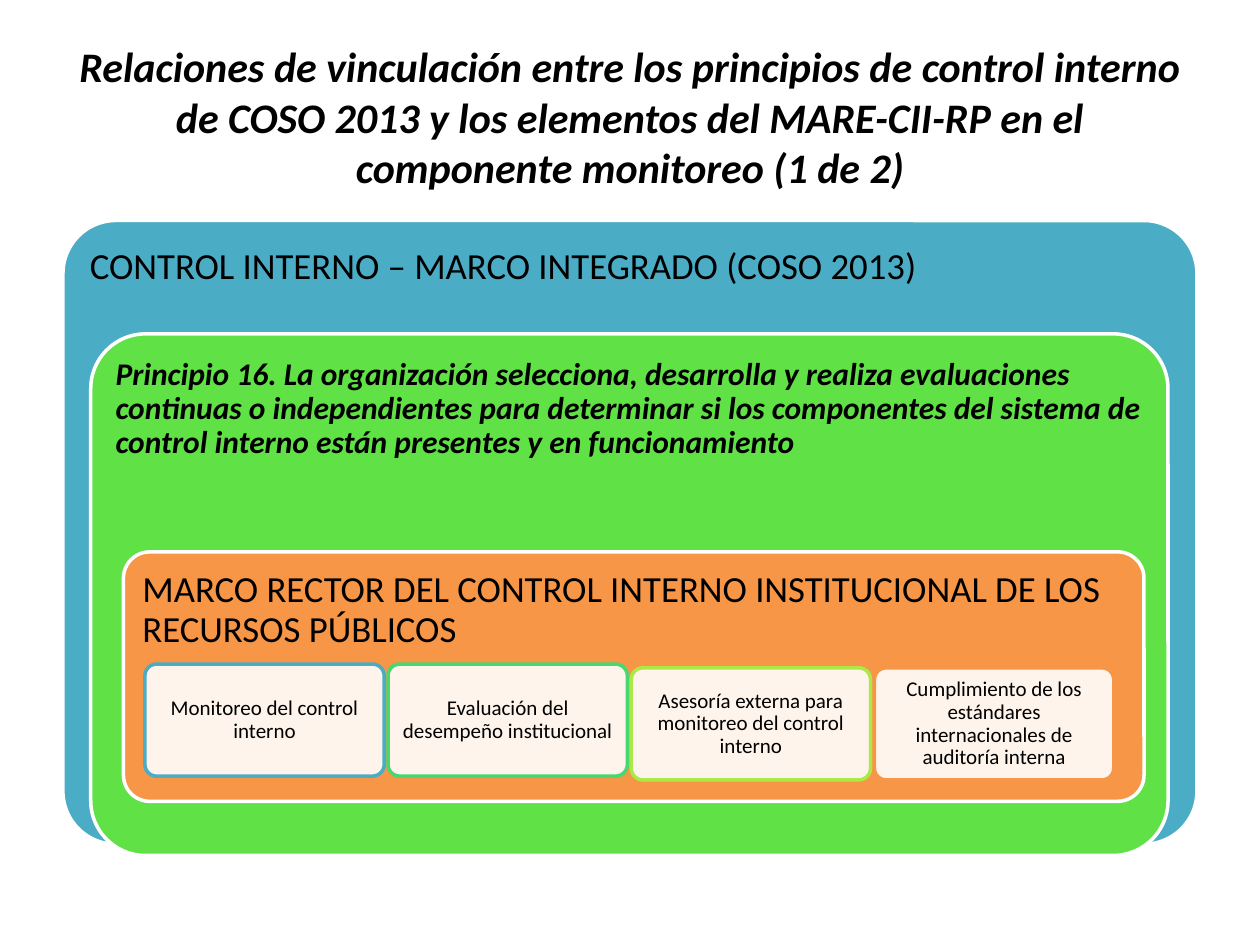
import dataclasses

import pptx
import pptx.dml.color
import pptx.enum.shapes
import pptx.enum.text
import pptx.oxml.ns
import pptx.util
from lxml import etree

EMU_PER_PX = 9144  # 100 px to the inch
PAGE_SIZE = (1000, 750)
ALIGN = pptx.enum.text.PP_ALIGN
ANCHOR = pptx.enum.text.MSO_ANCHOR


@dataclasses.dataclass(frozen=True)
class Theme:
    font: str = "Calibri"
    ink: str = "000000"
    white: str = "FFFFFF"
    blue: str = "4BACC6"
    green: str = "60E146"
    orange: str = "F79646"
    mint: str = "47D872"
    lime: str = "ACE946"
    title_size: int = 24
    heading_size: int = 21
    principle_size: int = 18
    card_size: int = 12
    border: int = 2
    card_opacity: int = 90


def px(length):
    return pptx.util.Emu(length * EMU_PER_PX)


def rgb(code):
    return pptx.dml.color.RGBColor.from_string(code)


class SlideBuilder:
    def __init__(self, deck, theme):
        self.theme = theme
        self.page = deck.slides.add_slide(deck.slide_layouts[6])

    def set_text(self, frame, text, size, emphasis=False, align=ALIGN.LEFT,
                 anchor=ANCHOR.TOP, margins=(10, 5), spacing=1.0):
        """Fill a text frame; margins are horizontal, then vertical."""
        frame.word_wrap = True
        frame.vertical_anchor = anchor
        frame.margin_left = frame.margin_right = px(margins[0])
        frame.margin_top = frame.margin_bottom = px(margins[1])
        para = frame.paragraphs[0]
        para.alignment = align
        para.line_spacing = spacing
        span = para.add_run()
        span.text = text
        span.font.name = self.theme.font
        span.font.size = pptx.util.Pt(size)
        span.font.bold = span.font.italic = emphasis
        span.font.color.rgb = rgb(self.theme.ink)

    def title(self, text, area):
        box = self.page.shapes.add_textbox(*map(px, area))
        self.set_text(box.text_frame, text, self.theme.title_size, emphasis=True,
                      align=ALIGN.CENTER, anchor=ANCHOR.MIDDLE)

    def rounded_box(self, area, fill, border, rounding):
        box = self.page.shapes.add_shape(
            pptx.enum.shapes.MSO_SHAPE.ROUNDED_RECTANGLE, *map(px, area))
        box.adjustments[0] = rounding
        box.shadow.inherit = False
        box.fill.solid()
        box.fill.fore_color.rgb = rgb(fill)
        box.line.color.rgb = rgb(border)
        box.line.width = pptx.util.Pt(self.theme.border)
        return box

    def panel(self, text, area, fill, size, rounding=0.105, margin=9, emphasis=False):
        box = self.rounded_box(area, fill, self.theme.white, rounding)
        self.set_text(box.text_frame, text, size, emphasis,
                      margins=(margin, margin), spacing=0.9)

    def card(self, text, area, border):
        box = self.rounded_box(area, self.theme.white, border, 0.105)
        fill = box.element.spPr.find(pptx.oxml.ns.qn("a:solidFill"))
        etree.SubElement(fill[0], pptx.oxml.ns.qn("a:alpha"),
                         val=str(self.theme.card_opacity * 1000))
        self.set_text(box.text_frame, text, self.theme.card_size, align=ALIGN.CENTER,
                      anchor=ANCHOR.MIDDLE, margins=(5, 5), spacing=0.9)


def main():
    theme = Theme()
    deck = pptx.Presentation()
    deck.slide_width, deck.slide_height = map(px, PAGE_SIZE)
    builder = SlideBuilder(deck, theme)

    builder.title(
        "Relaciones de vinculación entre los principios de control interno de COSO 2013 "
        "y los elementos del MARE-CII-RP en el componente monitoreo (1 de 2)",
        (50, 30, 900, 125))
    builder.panel("CONTROL INTERNO – MARCO INTEGRADO (COSO 2013)",
                  (50, 175, 900, 495), theme.blue, theme.heading_size, rounding=0.085)
    builder.panel(
        "Principio 16. La organización selecciona, desarrolla y realiza evaluaciones "
        "continuas o independientes para determinar si los componentes del sistema de "
        "control interno están presentes y en funcionamiento",
        (72, 265, 855, 414), theme.green, theme.principle_size, margin=7, emphasis=True)
    builder.panel(
        "MARCO RECTOR DEL CONTROL INTERNO INSTITUCIONAL DE LOS RECURSOS PÚBLICOS",
        (98, 438, 810, 198), theme.orange, theme.heading_size)

    cards = [
        ("Monitoreo del control interno", theme.blue, 527),
        ("Evaluación del desempeño institucional", theme.mint, 527),
        ("Asesoría externa para monitoreo del control interno", theme.lime, 530),
        ("Cumplimiento de los estándares internacionales de auditoría interna",
         theme.orange, 530),
    ]
    card_left, card_width, card_height, gap = 115, 190, 89, 3
    for index, (text, border, top) in enumerate(cards):
        left = card_left + index * (card_width + gap)
        builder.card(text, (left, top, card_width, card_height), border)

    deck.save("out.pptx")


if __name__ == "__main__":
    main()
